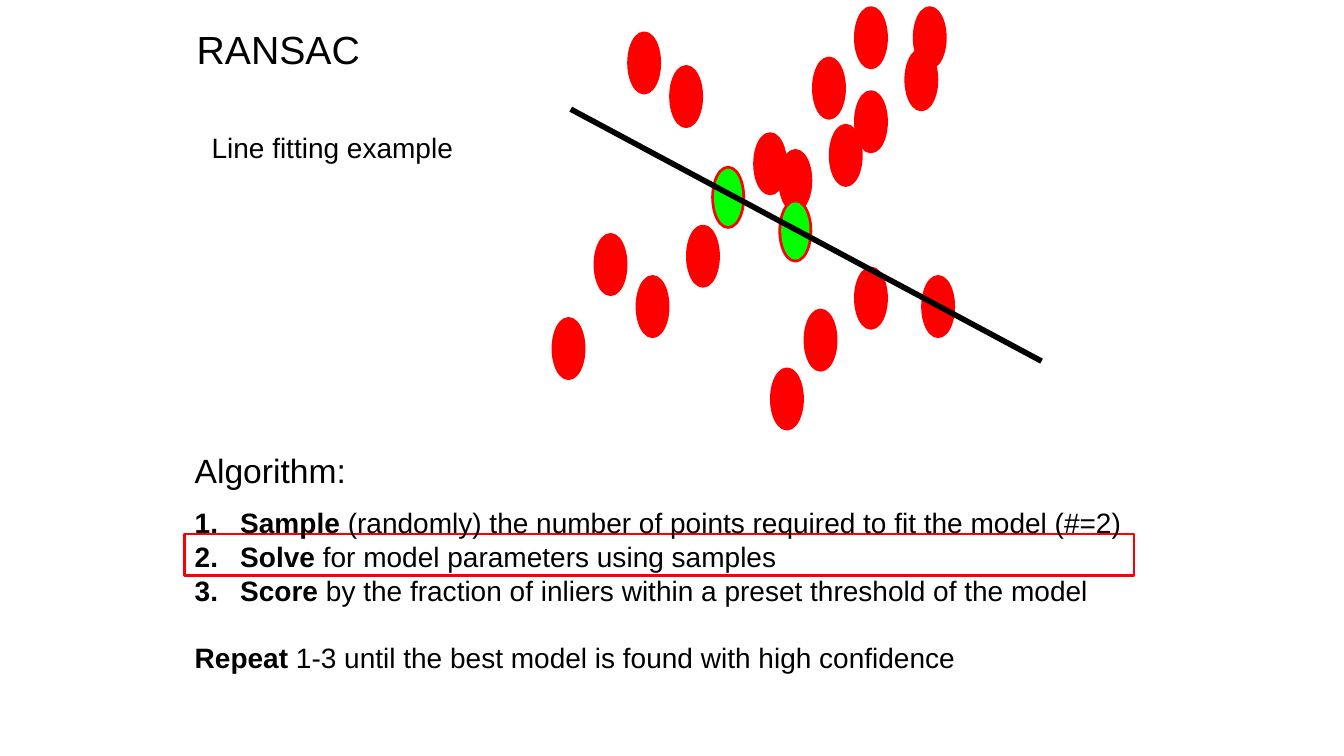
import dataclasses

import pptx
import pptx.dml.color
import pptx.enum.shapes
import pptx.enum.text
import pptx.oxml.ns
import pptx.util

Pt = pptx.util.Pt
Shape = pptx.enum.shapes.MSO_SHAPE
Align = pptx.enum.text.PP_ALIGN


def color(code):
    return pptx.dml.color.RGBColor.from_string(code)


def apply(target, values):
    for key, value in values.items():
        setattr(target, key, value)


@dataclasses.dataclass(frozen=True)
class Theme:
    font: str = "Arial"
    ink: str = "000000"
    point: str = "FF0000"
    sample: str = "00FF00"
    title: int = 28
    head: int = 24
    body: int = 20


class Board:
    """Holds the theme and the current slide."""

    def __init__(self, deck, theme):
        self.theme = theme
        self.slide = deck.slides.add_slide(deck.slide_layouts[5])
        self.shapes = self.slide.shapes

    def place(self, shape, box):
        names = ("left", "top", "width", "height")
        apply(shape, dict(zip(names, map(Pt, box))))

    def shape(self, kind, box, fill=None, line=None, weight=0):
        item = self.shapes.add_shape(kind, *map(Pt, box))
        item.shadow.inherit = False
        if fill:
            item.fill.solid()
            item.fill.fore_color.rgb = color(fill)
        else:
            item.fill.background()
        if line:
            item.line.color.rgb = color(line)
            item.line.width = Pt(weight)
        else:
            item.line.fill.background()

    def line(self, start, end, weight):
        kind = pptx.enum.shapes.MSO_CONNECTOR.STRAIGHT
        item = self.shapes.add_connector(kind, *map(Pt, start + end))
        item.line.color.rgb = color(self.theme.ink)
        item.line.width = Pt(weight)
        props = item._element.spPr
        props.append(props.makeelement(pptx.oxml.ns.qn("a:effectLst"), {}))

    def frame(self, shape, wrap):
        apply(shape.text_frame, {
            "word_wrap": wrap,
            "auto_size": pptx.enum.text.MSO_AUTO_SIZE.NONE,
            "vertical_anchor": pptx.enum.text.MSO_ANCHOR.TOP,
            "margin_left": Pt(7.2), "margin_right": Pt(7.2),
            "margin_top": Pt(3.6), "margin_bottom": Pt(3.6),
        })
        return shape.text_frame

    def fill(self, para, parts, size, align=Align.LEFT, gap=0):
        """Fill a paragraph with (text, bold) parts."""
        apply(para, {"alignment": align})
        if gap:
            para.space_before = Pt(gap)
        for text, bold in parts:
            run = para.add_run()
            run.text = text
            apply(run.font, {"name": self.theme.font, "size": Pt(size),
                             "bold": bold})
            run.font.color.rgb = color(self.theme.ink)

    def title(self, text, box):
        item = self.shapes.title
        self.place(item, box)
        para = self.frame(item, False).paragraphs[0]
        self.fill(para, [(text, False)], self.theme.title, Align.CENTER)

    def text(self, box, paras, wrap=True):
        """Add paragraphs given as (parts, size, gap, numbered)."""
        body = self.frame(self.shapes.add_textbox(*map(Pt, box)), wrap)
        for i, (parts, size, gap, numbered) in enumerate(paras):
            para = body.add_paragraph() if i else body.paragraphs[0]
            if numbered:
                self.number(para)
            self.fill(para, parts, size, gap=gap)

    def number(self, para):
        props = para._p.get_or_add_pPr()
        props.set("marL", str(Pt(32.5)))
        props.set("indent", str(-Pt(32.5)))
        tag = pptx.oxml.ns.qn("a:buAutoNum")
        props.append(props.makeelement(tag, {"type": "arabicPeriod"}))


POINTS = [
    (660, 198.5), (612, 192.5), (426, 168.5), (456, 198.5), (396, 228.5),
    (582, 42.5), (594, 90.5), (492, 162.5), (612, 6.5), (558, 108.5),
    (540, 96.5), (654, 6.5), (612, 66.5), (648, 36.5), (450, 24.5),
    (576, 222.5), (552, 264.5), (480, 48.5),
]
SAMPLES = [(510, 120.5), (558, 144.5)]
STEPS = [
    ("Sample", " (randomly) the number of points required to fit the model (#=2)"),
    ("Solve", " for model parameters using samples"),
    ("Score", " by the fraction of inliers within a preset threshold of the model"),
]


def main():
    deck = pptx.Presentation()
    apply(deck, {"slide_width": Pt(960), "slide_height": Pt(540)})
    theme = Theme()
    board = Board(deck, theme)
    board.title("RANSAC", (132.5, 14.4, 132.5, 41))

    dot = (20.2, 41)
    for spot in POINTS + SAMPLES:
        board.shape(Shape.OVAL, spot + dot, theme.point, theme.point, 4)
    for spot in SAMPLES:
        board.shape(Shape.OVAL, spot + dot, theme.sample)
    board.line((407.7, 78), (744, 258), 4)

    board.shape(Shape.RECTANGLE, (132, 381.5, 678, 29.5),
                line=theme.point, weight=2)
    paras = [([("Algorithm:", False)], theme.head, 0, False)]
    for i, (verb, rest) in enumerate(STEPS):
        gap = 0 if i else 10.8
        paras.append(([(verb, True), (rest, False)], theme.body, gap, True))
    paras.append(([("Repeat", True),
                   (" 1-3 until the best model is found with high confidence",
                    False)], theme.body, 24, False))
    board.text((132, 318.2, 678, 168.5), paras)
    board.text((144, 90, 188.6, 31.7),
               [([("Line fitting example", False)], theme.body, 0, False)],
               wrap=False)
    deck.save("out.pptx")


if __name__ == "__main__":
    main()
